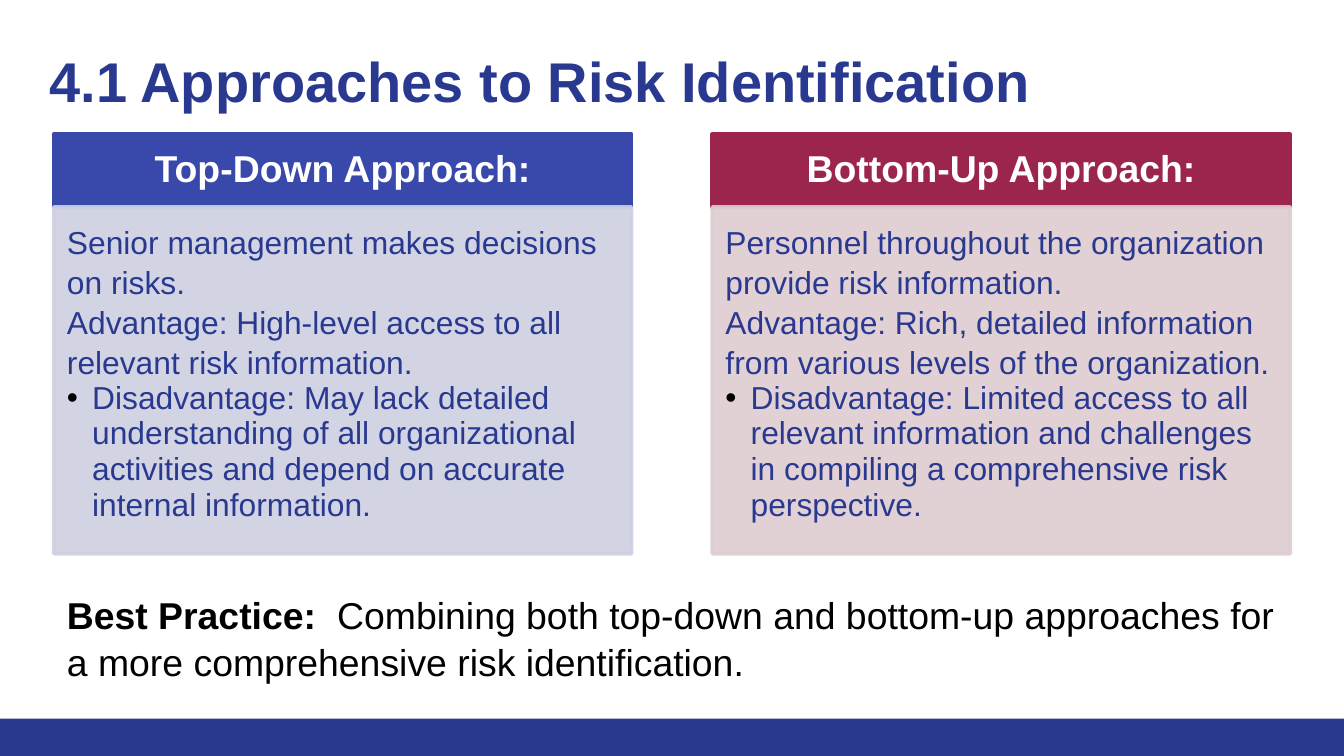
from dataclasses import dataclass

from lxml import etree
from pptx import Presentation
from pptx.dml.color import RGBColor
from pptx.enum.shapes import MSO_SHAPE
from pptx.enum.text import MSO_ANCHOR, PP_ALIGN
from pptx.oxml.ns import qn
from pptx.util import Pt

RECT = MSO_SHAPE.RECTANGLE
TOP, MIDDLE = MSO_ANCHOR.TOP, MSO_ANCHOR.MIDDLE
LEFT, CENTER = PP_ALIGN.LEFT, PP_ALIGN.CENTER
FONT = "Arial"
NAVY, WHITE, BLACK = "2A3990", "FFFFFF", "000000"
MARGIN, CARD_W, CARD_STEP = 28.8, 309.6, 352.8
HEAD_TOP, HEAD_H, BODY_H = 72, 38.9, 185.8
BULLET_INDENT = 13.5


@dataclass
class Approach:
    heading: str
    points: list[str]
    head_color: str
    body_color: str


APPROACHES = [
    Approach(
        "Top-Down Approach:",
        [
            "Senior management makes decisions on risks.",
            "Advantage: High-level access to all relevant risk information.",
            "Disadvantage: May lack detailed understanding of all organizational "
            "activities and depend on accurate internal information.",
        ],
        "3949AB",
        "CED0E2",
    ),
    Approach(
        "Bottom-Up Approach:",
        [
            "Personnel throughout the organization provide risk information.",
            "Advantage: Rich, detailed information from various levels of the organization.",
            "Disadvantage: Limited access to all relevant information and challenges "
            "in compiling a comprehensive risk perspective.",
        ],
        "9C254D",
        "DECDD0",
    ),
]


def rgb(color: str) -> RGBColor:
    return RGBColor.from_string(color)


def add_rect(s, x: float, y: float, w: float, h: float, color: str,
             line_width: float = 0, alpha: int = 100):
    sp = s.shapes.add_shape(RECT, Pt(x), Pt(y), Pt(w), Pt(h))
    sp.shadow.inherit = False
    sp.fill.solid()
    sp.fill.fore_color.rgb = rgb(color)
    if line_width:
        sp.line.color.rgb = rgb(color)
        sp.line.width = Pt(line_width)
    else:
        sp.line.fill.background()
    if alpha < 100:
        for clr in sp._element.spPr.iter(qn("a:srgbClr")):
            etree.SubElement(clr, qn("a:alpha"), val=str(alpha * 1000))
    return sp


def set_frame(sp, insets: tuple[float, float, float, float], anchor=TOP):
    tf = sp.text_frame
    tf.word_wrap = True
    tf.vertical_anchor = anchor
    tf.margin_left, tf.margin_top, tf.margin_right, tf.margin_bottom = map(Pt, insets)
    return tf


def format_paragraph(p, spacing: float, align=LEFT) -> None:
    p.alignment = align
    p.line_spacing = spacing
    p.space_before = p.space_after = Pt(0)


def add_bullet(p) -> None:
    pPr = p._p.get_or_add_pPr()
    pPr.set("marL", str(Pt(BULLET_INDENT)))
    pPr.set("indent", str(-Pt(BULLET_INDENT)))
    clr = etree.SubElement(pPr, qn("a:buClr"))
    etree.SubElement(clr, qn("a:srgbClr"), val=BLACK)
    etree.SubElement(pPr, qn("a:buFont"), typeface=FONT)
    etree.SubElement(pPr, qn("a:buChar"), char="•")


def add_run(p, text: str, size: float, color: str, bold: bool = False) -> None:
    r = p.add_run()
    r.text = text
    r.font.name = FONT
    r.font.size = Pt(size)
    r.font.bold = bold
    r.font.color.rgb = rgb(color)


def add_card(s, x: float, approach: Approach) -> None:
    head = add_rect(s, x, HEAD_TOP, CARD_W, HEAD_H, approach.head_color, 2)
    p = set_frame(head, (9.4, 5.8, 9.4, 5.8), MIDDLE).paragraphs[0]
    format_paragraph(p, 0.9, CENTER)
    add_run(p, approach.heading, 20, WHITE, True)

    body = add_rect(s, x, HEAD_TOP + HEAD_H, CARD_W, BODY_H, approach.body_color, 2, 90)
    tf = set_frame(body, (7.2, 7.2, 9.4, 10.8))
    last = len(approach.points) - 1
    for i, point in enumerate(approach.points):
        p = tf.add_paragraph() if i else tf.paragraphs[0]
        format_paragraph(p, 0.94 if i == last else 1.05)
        if i == last:
            add_bullet(p)
        add_run(p, point, 17, NAVY)


def add_text(s, x: float, y: float, w: float, h: float,
             insets: tuple[float, float, float, float], spacing: float):
    sp = s.shapes.add_textbox(Pt(x), Pt(y), Pt(w), Pt(h))
    p = set_frame(sp, insets).paragraphs[0]
    format_paragraph(p, spacing)
    return p


def main() -> None:
    prs = Presentation()
    prs.slide_width, prs.slide_height = Pt(720), Pt(405)
    s = prs.slides.add_slide(prs.slide_layouts[6])

    add_rect(s, 0, 385, 720, 20, NAVY)
    p = add_text(s, 19.4, 14.4, 662.4, 64, (7.2, 7.2, 7.2, 7.2), 1.1)
    add_run(p, "4.1 Approaches to Risk Identification", 30, NAVY, True)

    for i, approach in enumerate(APPROACHES):
        add_card(s, MARGIN + i * CARD_STEP, approach)

    p = add_text(s, MARGIN, 312.5, 662.4, 55.4, (7.2, 3.6, 7.2, 3.6), 1.05)
    add_run(p, "Best Practice:  ", 20, BLACK, True)
    add_run(p, "Combining both top-down and bottom-up approaches for "
               "a more comprehensive risk identification.", 20, BLACK)

    prs.save("out.pptx")


if __name__ == "__main__":
    main()
